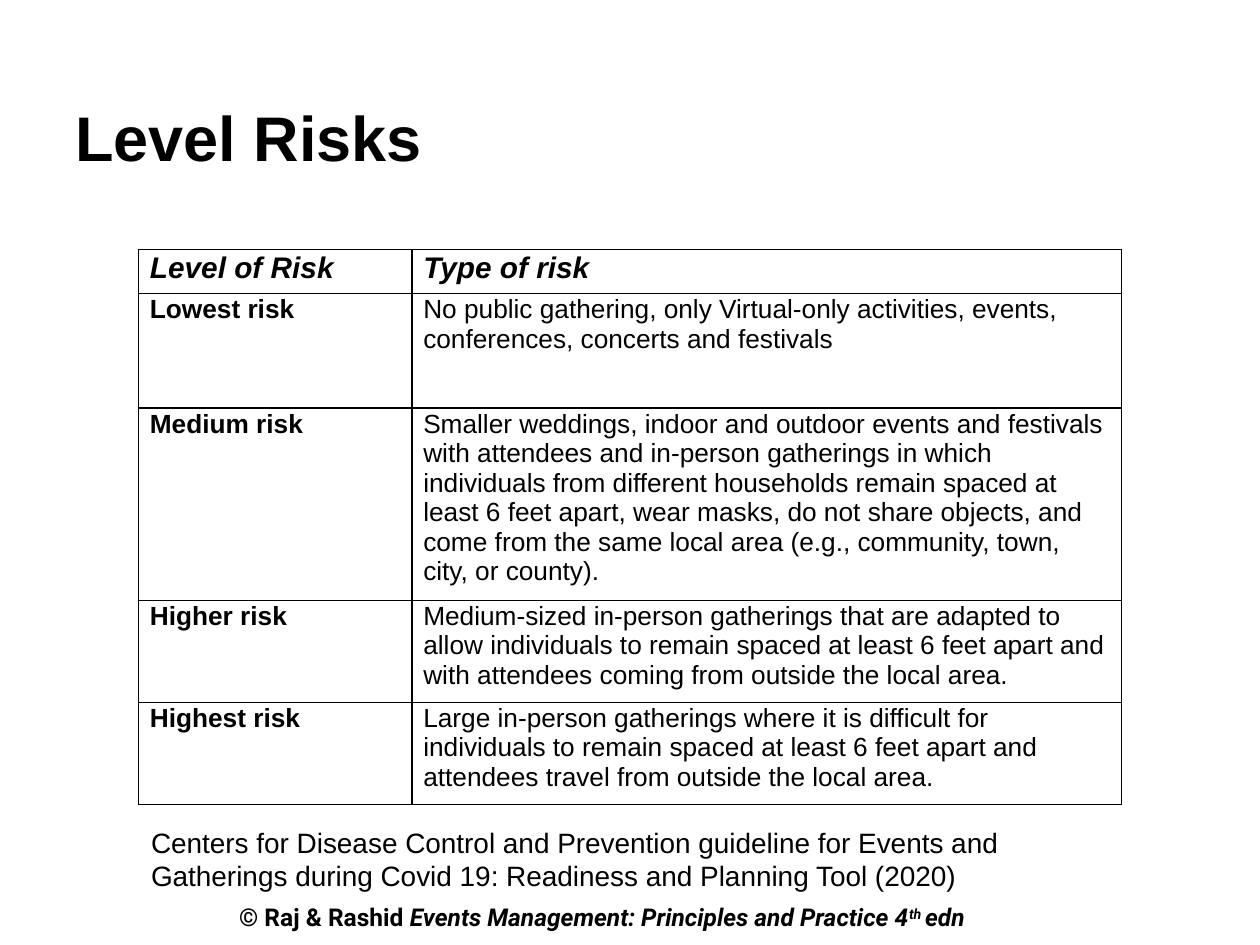
from typing import NamedTuple

import pptx
import pptx.dml.color
import pptx.enum.text
import pptx.oxml
import pptx.oxml.ns
import pptx.util
from pptx.util import Inches

BLACK = pptx.dml.color.RGBColor(0, 0, 0)
BORDER_SIDES = ("a:lnL", "a:lnR", "a:lnT", "a:lnB")


class Style(NamedTuple):
    size: float
    bold: bool = False
    italic: bool = False
    face: str = "Arial"


class Box(NamedTuple):
    left: float
    top: float
    width: float
    height: float

    def lengths(self) -> tuple:
        return tuple(Inches(value) for value in self)


class RiskRow(NamedTuple):
    level: str
    description: str
    height: float
    level_style: Style = Style(15, bold=True)
    description_style: Style = Style(15)


class FooterPart(NamedTuple):
    text: str
    italic: bool = True
    baseline: int = 0


HEADING = Style(17, bold=True, italic=True)
COLUMN_WIDTHS = (2.17, 5.63)
RISK_ROWS = (
    RiskRow("Level of Risk", "Type of risk", 0.35, HEADING, HEADING),
    RiskRow(
        "Lowest risk",
        "No public gathering, only Virtual-only activities, events, "
        "conferences, concerts and festivals",
        0.91,
    ),
    RiskRow(
        "Medium risk",
        "Smaller weddings, indoor and outdoor events and festivals with attendees "
        "and in-person gatherings in which individuals from different households "
        "remain spaced at least 6 feet apart, wear masks, do not share objects, and "
        "come from the same local area (e.g., community, town, city, or county).",
        1.3,
    ),
    RiskRow(
        "Higher risk",
        "Medium-sized in-person gatherings that are adapted to allow individuals to "
        "remain spaced at least 6 feet apart and with attendees coming from outside "
        "the local area.",
        0.81,
    ),
    RiskRow(
        "Highest risk",
        "Large in-person gatherings where it is difficult for individuals to remain "
        "spaced at least 6 feet apart and attendees travel from outside the local area.",
        0.81,
    ),
)
FOOTER_PARTS = (
    FooterPart("© Raj & Rashid ", italic=False),
    FooterPart("Events Management: Principles and Practice 4"),
    FooterPart("th ", baseline=30000),
    FooterPart("edn"),
)


def apply_style(paragraph, style: Style) -> None:
    font = paragraph.font
    font.name = style.face
    font.size = pptx.util.Pt(style.size)
    font.bold = style.bold
    font.italic = style.italic
    font.color.rgb = BLACK


def add_text(slide, box: Box, text: str, style: Style, wrap: bool = True):
    frame = slide.shapes.add_textbox(*box.lengths()).text_frame
    frame.word_wrap = wrap
    paragraph = frame.paragraphs[0]
    if text:
        paragraph.text = text
    apply_style(paragraph, style)
    return paragraph


def add_borders(cell) -> None:
    properties = cell._tc.get_or_add_tcPr()
    for position, side in enumerate(BORDER_SIDES):
        border = pptx.oxml.parse_xml(
            f'<{side} {pptx.oxml.ns.nsdecls("a")} w="12700"><a:solidFill>'
            f'<a:srgbClr val="{BLACK}"/></a:solidFill></{side}>'
        )
        properties.insert(position, border)


def fill_cell(cell, text: str, style: Style) -> None:
    cell.fill.background()
    cell.margin_left = cell.margin_right = Inches(0.09)
    cell.margin_top = Inches(0.01)
    cell.margin_bottom = Inches(0)
    paragraph = cell.text_frame.paragraphs[0]
    paragraph.text = text
    paragraph.line_spacing = 1.01
    paragraph.space_after = pptx.util.Pt(6)
    apply_style(paragraph, style)
    add_borders(cell)


def add_risk_table(slide, left: float, top: float) -> None:
    box = Box(left, top, sum(COLUMN_WIDTHS), sum(row.height for row in RISK_ROWS))
    table = slide.shapes.add_table(
        len(RISK_ROWS), len(COLUMN_WIDTHS), *box.lengths()
    ).table
    table.horz_banding = False
    table.first_row = False
    for column, width in zip(table.columns, COLUMN_WIDTHS):
        column.width = Inches(width)
    for index, risk in enumerate(RISK_ROWS):
        table.rows[index].height = Inches(risk.height)
        fill_cell(table.cell(index, 0), risk.level, risk.level_style)
        fill_cell(table.cell(index, 1), risk.description, risk.description_style)


def add_footer(slide) -> None:
    paragraph = add_text(
        slide, Box(1.8, 7.11, 6.97, 0.34), "",
        Style(14, bold=True, face="Roboto"), wrap=False,
    )
    paragraph.alignment = pptx.enum.text.PP_ALIGN.LEFT
    for part in FOOTER_PARTS:
        run = paragraph.add_run()
        run.text = part.text
        run.font.italic = part.italic
        if part.baseline:
            run.font._element.set("baseline", str(part.baseline))


def main() -> None:
    deck = pptx.Presentation()
    deck.slide_width = Inches(10)
    deck.slide_height = Inches(7.5)
    slide = deck.slides.add_slide(deck.slide_layouts[6])
    add_footer(slide)
    add_text(slide, Box(0.5, 0.73, 9, 1.05), "Level Risks", Style(36, bold=True))
    add_risk_table(slide, 1.1, 1.98)
    add_text(
        slide,
        Box(1.1, 6.5, 7.58, 0.94),
        "Centers for Disease Control and Prevention guideline for Events and "
        "Gatherings during Covid 19: Readiness and Planning Tool (2020)",
        Style(16),
    )
    deck.save("out.pptx")


if __name__ == "__main__":
    main()
